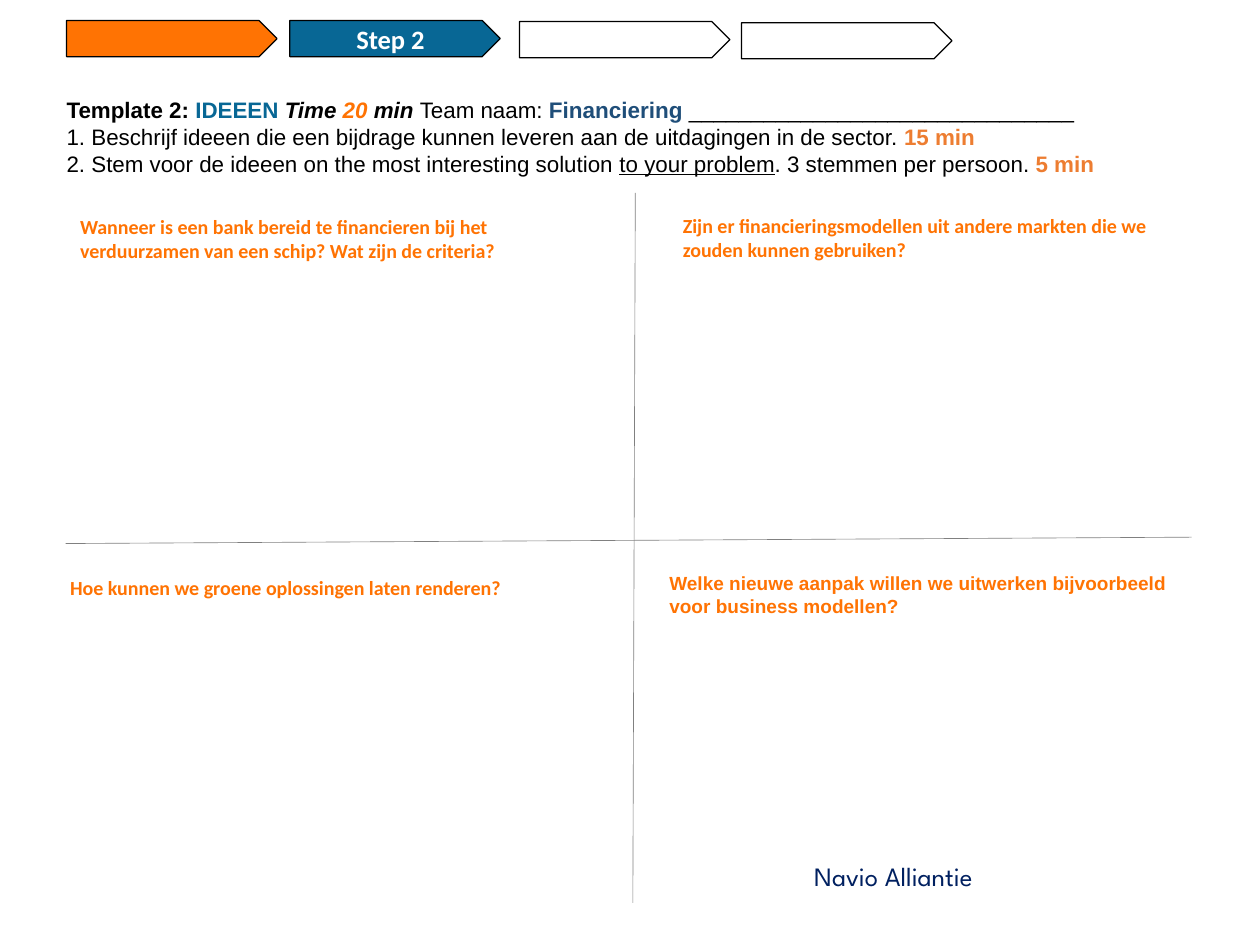
from lxml import etree
from pptx import Presentation, util as u
from pptx.dml.color import RGBColor
from pptx.enum import shapes, text
from pptx.oxml.ns import qn

COLORS = {
    "orange": "FF7303",
    "blue": "086795",
    "navy": "1F4E79",
    "amber": "ED7D31",
    "ink": "002060",
    "grey": "808080",
    "black": "000000",
    "white": "FFFFFF",
}


def add_run(paragraph, words, color, **formats):
    run = paragraph.add_run()
    run.text = words
    run.font.color.rgb = RGBColor.from_string(COLORS[color])
    for name, value in formats.items():
        setattr(run.font, name, value)


def add_text_frame(left, top, width, height):
    box = slide.shapes.add_textbox(u.Cm(left), u.Cm(top), u.Cm(width), u.Cm(height))
    frame_formats = {"word_wrap": True, "auto_size": text.MSO_AUTO_SIZE.SHAPE_TO_FIT_TEXT}
    for name, value in frame_formats.items():
        setattr(box.text_frame, name, value)
    return box.text_frame


presentation = Presentation()
presentation.slide_width = u.Cm(35.56)
presentation.slide_height = u.Cm(26.67)
slide = presentation.slides.add_slide(presentation.slide_layouts[6])

bold = {"bold": True}
bold_italic = {"bold": True, "italic": True}
instructions = [
    [
        ("Template 2: ", "black", bold),
        ("IDEEEN ", "blue", bold),
        ("Time ", "black", bold_italic),
        ("20", "orange", bold_italic),
        (" min ", "black", bold_italic),
        ("Team naam: ", "black", {}),
        ("Financiering", "navy", {"bold": True, "size": u.Pt(18)}),
        (" " + "_" * 31, "black", {}),
    ],
    [
        ("1. Beschrijf ideeen die een bijdrage kunnen leveren aan de uitdagingen in de sector. ", "black", {}),
        ("15 min", "amber", bold),
    ],
    [
        ("2. Stem voor de ideeen on the most interesting solution ", "black", {}),
        ("to your problem", "black", {"underline": True}),
        (". 3 stemmen per persoon. ", "black", {}),
        ("5 min", "amber", bold),
    ],
]
frame = add_text_frame(1.63, 2.59, 32.79, 3.33)
for index, runs in enumerate(instructions):
    paragraph = frame.add_paragraph() if index else frame.paragraphs[0]
    for words, color, formats in runs:
        add_run(paragraph, words, color, **{"name": "Arial", "size": u.Pt(17.9), **formats})

dividers = [(17.93, 5.44, 17.86, 25.48), (1.85, 15.34, 33.63, 15.16)]
for ends in dividers:
    divider = slide.shapes.add_connector(shapes.MSO_CONNECTOR.STRAIGHT, *map(u.Cm, ends))
    divider.line.color.rgb = RGBColor.from_string(COLORS["grey"])
    divider.line.width = u.Pt(0.5)
    etree.SubElement(divider.element.spPr, qn("a:effectLst"))

steps = [
    (1.88, 0.58, "orange", ""),
    (8.18, 0.58, "blue", "Step 2"),
    (14.66, 0.61, None, ""),
    (20.93, 0.64, None, ""),
]
for left, top, color, label in steps:
    step = slide.shapes.add_shape(
        shapes.MSO_SHAPE.PENTAGON, u.Cm(left), u.Cm(top), u.Cm(5.94), u.Cm(1.02)
    )
    step.shadow.inherit = False
    step.line.color.rgb = RGBColor.from_string(COLORS["black"])
    step.line.width = u.Pt(1)
    if color:
        step.fill.solid()
        step.fill.fore_color.rgb = RGBColor.from_string(COLORS[color])
    else:
        step.fill.background()
    if label:
        step.text_frame.vertical_anchor = text.MSO_ANCHOR.MIDDLE
        paragraph = step.text_frame.paragraphs[0]
        paragraph.alignment = text.PP_ALIGN.CENTER
        add_run(paragraph, label, "white", name="Calibri", size=u.Pt(21.2), bold=True)

questions = [
    (2.01, 5.92, 1.63, "Calibri", 16,
     "Wanneer is een bank bereid te financieren bij het verduurzamen van een schip? Wat zijn de criteria?"),
    (19.02, 5.89, 1.63, "Calibri", 16,
     "Zijn er financieringsmodellen uit andere markten die we zouden kunnen gebruiken?"),
    (1.73, 16.13, 0.94, "Calibri", 16,
     "Hoe kunnen we groene oplossingen laten renderen?"),
    (18.64, 16, 1.55, "Arial", 15.2,
     "Welke nieuwe aanpak willen we uitwerken bijvoorbeeld voor business modellen?"),
]
for left, top, height, font, size, question in questions:
    frame = add_text_frame(left, top, 14.68, height)
    add_run(frame.paragraphs[0], question, "orange", name=font, size=u.Pt(size), bold=True)

frame = add_text_frame(22.73, 24.16, 7.32, 1.17)
add_run(frame.paragraphs[0], "Navio Alliantie", "ink", name="League Spartan", size=u.Pt(21.2))

presentation.save("out.pptx")
